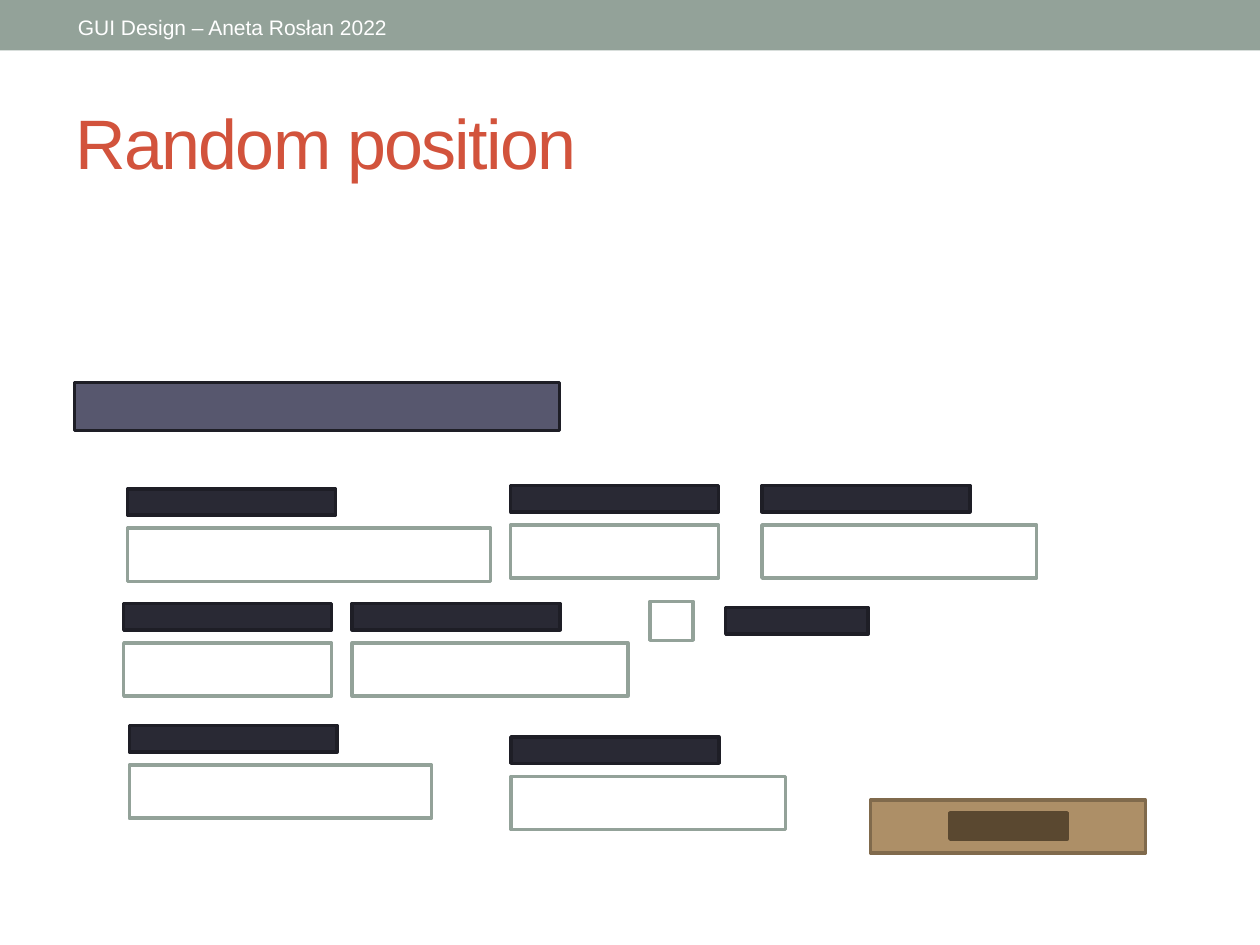
from pptx import Presentation
from pptx.dml.color import RGBColor
from pptx.enum.shapes import MSO_SHAPE
from pptx.enum.text import MSO_ANCHOR, PP_ALIGN
from pptx.util import Pt

COLORS = {
    "sage": "93A299", "white": "FFFFFF", "title": "D2533C",
    "label": "292934", "dark_edge": "1E1E26", "heading": "57576E",
    "button": "AD8F67", "button_edge": "806A4C", "button_text": "5A4830",
}


def add_box(left, top, width, height, fill, line=None):
    shape = slide.shapes.add_shape(
        MSO_SHAPE.RECTANGLE, Pt(left), Pt(top), Pt(width), Pt(height))
    shape.shadow.inherit = False
    shape.fill.solid()
    shape.fill.fore_color.rgb = RGBColor.from_string(COLORS[fill])
    if line:
        shape.line.color.rgb = RGBColor.from_string(COLORS[line])
        shape.line.width = Pt(2)
    else:
        shape.line.fill.background()
    return shape


def write_text(shape, text, size, color, spacing=0):
    frame = shape.text_frame
    frame.word_wrap = True
    frame.vertical_anchor = MSO_ANCHOR.MIDDLE
    paragraph = frame.paragraphs[0]
    paragraph.alignment = PP_ALIGN.LEFT
    run = paragraph.add_run()
    run.text = text
    run.font.name = "Arial"
    run.font.size = Pt(size)
    run.font.color.rgb = RGBColor.from_string(COLORS[color])
    if spacing:
        run.font._element.set("spc", str(spacing * 100))


presentation = Presentation()
presentation.slide_width = Pt(720)
presentation.slide_height = Pt(540)
slide = presentation.slides.add_slide(presentation.slide_layouts[5])

# Header band
add_box(0, 0, 720, 28.8, "sage")
header = add_box(37.4, 4.6, 226.8, 21.8, "sage")
write_text(header, "GUI Design – Aneta Rosłan 2022", 12, "white")

# Title
title = slide.shapes.title
title.left, title.top, title.width, title.height = Pt(36), Pt(41.8), Pt(648), Pt(77.8)
write_text(title, "Random position", 40, "title", spacing=-1)

# Form heading
add_box(42.5, 218.6, 277.2, 27.4, "heading", "dark_edge")

# Input fields, each with its label above: left, top, width
FIELD_HEIGHT, LABEL_WIDTH, LABEL_HEIGHT, LABEL_OFFSET = 30.4, 118.8, 15.1, 22.6
fields = [
    (72.9, 301.9, 207.4), (291.8, 300, 118.8), (435.4, 300, 157),
    (70.7, 367.4, 118.8), (201.3, 367.4, 157.5),
    (73.9, 437.2, 172.8), (292, 443.7, 157),
]
for left, top, width in fields:
    add_box(left, top, width, FIELD_HEIGHT, "white", "sage")
    add_box(left, top - LABEL_OFFSET, LABEL_WIDTH, LABEL_HEIGHT, "label", "dark_edge")

# Check box with its label
add_box(371.5, 343.6, 24.5, 22.3, "white", "sage")
add_box(414.7, 347.2, 81.4, LABEL_HEIGHT, "label", "dark_edge")

# Button with its caption
add_box(497.5, 457.2, 157, FIELD_HEIGHT, "button", "button_edge")
add_box(542.9, 464.4, 67, LABEL_HEIGHT, "button_text", "button_text")

presentation.save("out.pptx")
